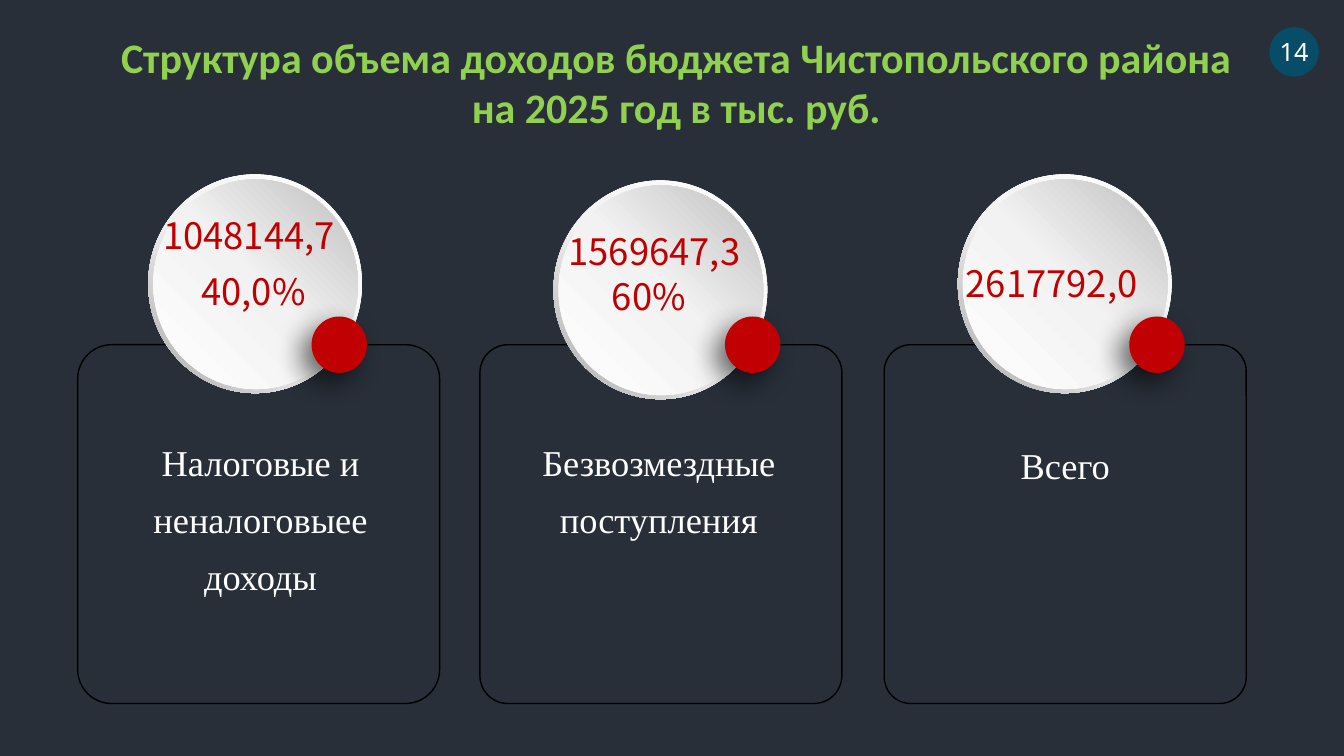
from dataclasses import dataclass

from lxml import etree
from pptx import Presentation
from pptx.dml.color import RGBColor
from pptx.enum.shapes import MSO_SHAPE
from pptx.enum.text import MSO_ANCHOR, MSO_AUTO_SIZE, PP_ALIGN
from pptx.oxml import parse_xml
from pptx.oxml.ns import nsdecls, qn
from pptx.util import Inches, Pt

CENTER, LEFT = PP_ALIGN.CENTER, PP_ALIGN.LEFT
TOP, MIDDLE = MSO_ANCHOR.TOP, MSO_ANCHOR.MIDDLE
OVAL, DONUT = MSO_SHAPE.OVAL, MSO_SHAPE.DONUT
ROUNDED = MSO_SHAPE.ROUNDED_RECTANGLE
NO_AUTOFIT = MSO_AUTO_SIZE.NONE
TITLE_ONLY = 5


@dataclass(frozen=True)
class TextStyle:
    font: str
    size: int
    color: str
    bold: bool = False
    spacing: float = 1.0


class Theme:
    background = "282F39"
    outline = "000000"
    dot = "C00002"
    badge = "074D67"
    rim = ((0, "FFFFFF"), (55, "F2F2F2"), (100, "A6A6A6"))
    disc = ((0, "FFFFFF"), (51, "F2F2F2"), (100, "BFBFBF"))
    title = TextStyle("Calibri", 30, "92D050", bold=True)
    amount = TextStyle("Noto Sans CJK SC", 26, "C00000")
    label = TextStyle("Times New Roman", 26, "FFFFFF", spacing=1.3)
    number = TextStyle("Noto Sans", 18, "FFFFFF")


@dataclass(frozen=True)
class Card:
    """Figures are (text, x, y) from the medallion's corner, in inches."""
    left: float
    corner: float
    medallion: tuple  # offset from the card's corner
    dot_x: float
    label: tuple      # text, then offset from the card's corner
    figures: tuple


CARD_TOP, CARD_WIDTH, CARD_HEIGHT = 3.42, 3.59, 3.56
CARDS = (
    Card(0.77, 0.095, (0.70, -1.69), 2.32,
         ("Налоговые и неналоговыее доходы", 0.39, 0.82),
         (("1048144,7", 0.05, 0.34), ("40,0%", 0.43, 0.89))),
    Card(4.76, 0.078, (0.73, -1.63), 2.43,
         ("Безвозмездные поступления", 0.35, 0.82),
         (("1569647,3", 0.05, 0.43), ("60%", 0.48, 0.88))),
    Card(8.77, 0.074, (0.73, -1.69), 2.43,
         ("Всего", 0.37, 0.85),
         (("2617792,0", -0.02, 0.81),)),
)


def write(frame, text, style, alignment, margin=None, anchor=TOP):
    frame.word_wrap = True
    frame.auto_size = NO_AUTOFIT
    frame.vertical_anchor = anchor
    if margin is not None:
        frame.margin_left = frame.margin_right = Inches(margin)
        frame.margin_top = frame.margin_bottom = Inches(margin)
    frame.text = text
    paragraph = frame.paragraphs[0]
    paragraph.alignment = alignment
    paragraph.line_spacing = style.spacing
    font = paragraph.font
    font.name, font.size, font.bold = style.font, Pt(style.size), style.bold
    font.color.rgb = RGBColor.from_string(style.color)


def add_text(slide, box, text, style, alignment, margin=None):
    shape = slide.shapes.add_textbox(*map(Inches, box))
    write(shape.text_frame, text, style, alignment, margin)


def add_plain(shapes, kind, box, color=None):
    """Add a preset shape without line or shadow, filled if a colour is given."""
    shape = shapes.add_shape(kind, *map(Inches, box))
    shape.shadow.inherit = False
    shape.line.fill.background()
    if color:
        shape.fill.solid()
        shape.fill.fore_color.rgb = RGBColor.from_string(color)
    else:
        shape.fill.background()
    return shape


def set_gradient(shape, stops, angle):
    marks = "".join(
        f'<a:gs pos="{position * 1000}"><a:srgbClr val="{color}"/></a:gs>'
        for position, color in stops)
    gradient = parse_xml(
        f'<a:gradFill {nsdecls("a")} rotWithShape="1"><a:gsLst>{marks}</a:gsLst>'
        f'<a:lin ang="{angle * 60000}" scaled="0"/></a:gradFill>')
    properties = shape.fill._xPr
    properties.replace(properties.find(qn("a:noFill")), gradient)


def set_shadow(shape, color, opacity, blur, distance, angle):
    effects = shape.fill._xPr.find(qn("a:effectLst"))
    shadow = etree.SubElement(
        effects, qn("a:outerShdw"), blurRad=str(Pt(blur)), dist=str(Pt(distance)),
        dir=str(angle * 60000), algn="ctr", rotWithShape="0")
    tint = etree.SubElement(shadow, qn("a:srgbClr"), val=color)
    etree.SubElement(tint, qn("a:alpha"), val=str(opacity * 1000))


def add_title(slide, box, text):
    title = slide.shapes.title
    title.left, title.top, title.width, title.height = map(Inches, box)
    write(title.text_frame, text, Theme.title, CENTER)


def add_medallion(slide, left, top, figures):
    group = slide.shapes.add_group_shape()
    rim = add_plain(group.shapes, DONUT, (left, top, 2.12, 2.17))
    rim.adjustments[0] = 0.049
    set_gradient(rim, Theme.rim, 135)
    disc = add_plain(group.shapes, OVAL, (left + 0.05, top + 0.05, 2.03, 2.08))
    set_gradient(disc, Theme.disc, 315)
    for text, x, y in figures:
        add_text(slide, (left + x, top + y, 2.1, 0.54), text, Theme.amount, LEFT)


def add_card(slide, card):
    left, top = card.left, CARD_TOP
    # Outlined panel
    panel = add_plain(slide.shapes, ROUNDED, (left, top, CARD_WIDTH, CARD_HEIGHT))
    panel.adjustments[0] = card.corner
    panel.line.color.rgb = RGBColor.from_string(Theme.outline)
    panel.line.width = Pt(1)
    # Medallion with amounts
    x, y = card.medallion
    add_medallion(slide, left + x, top + y, card.figures)
    # Red dot
    dot = add_plain(slide.shapes, OVAL,
                    (left + card.dot_x, top - 0.28, 0.55, 0.56), Theme.dot)
    set_shadow(dot, "000000", opacity=60, blur=20, distance=10, angle=135)
    # Label
    text, x, y = card.label
    add_text(slide, (left + x, top + y, 2.85, 1.71), text, Theme.label, CENTER, margin=0)


def add_badge(slide, box, text):
    badge = add_plain(slide.shapes, OVAL, box, Theme.badge)
    write(badge.text_frame, text, Theme.number, CENTER, margin=0, anchor=MIDDLE)


def main():
    presentation = Presentation()
    presentation.slide_width = Inches(13.33)
    presentation.slide_height = Inches(7.5)
    slide = presentation.slides.add_slide(presentation.slide_layouts[TITLE_ONLY])
    slide.background.fill.solid()
    slide.background.fill.fore_color.rgb = RGBColor.from_string(Theme.background)

    add_title(slide, (1.07, 0.26, 11.28, 1.11),
              "Структура объема доходов бюджета Чистопольского района "
              "на 2025 год в тыс. руб.")
    for card in CARDS:
        add_card(slide, card)
    add_badge(slide, (12.59, 0.27, 0.49, 0.49), "14")
    presentation.save("out.pptx")


if __name__ == "__main__":
    main()
